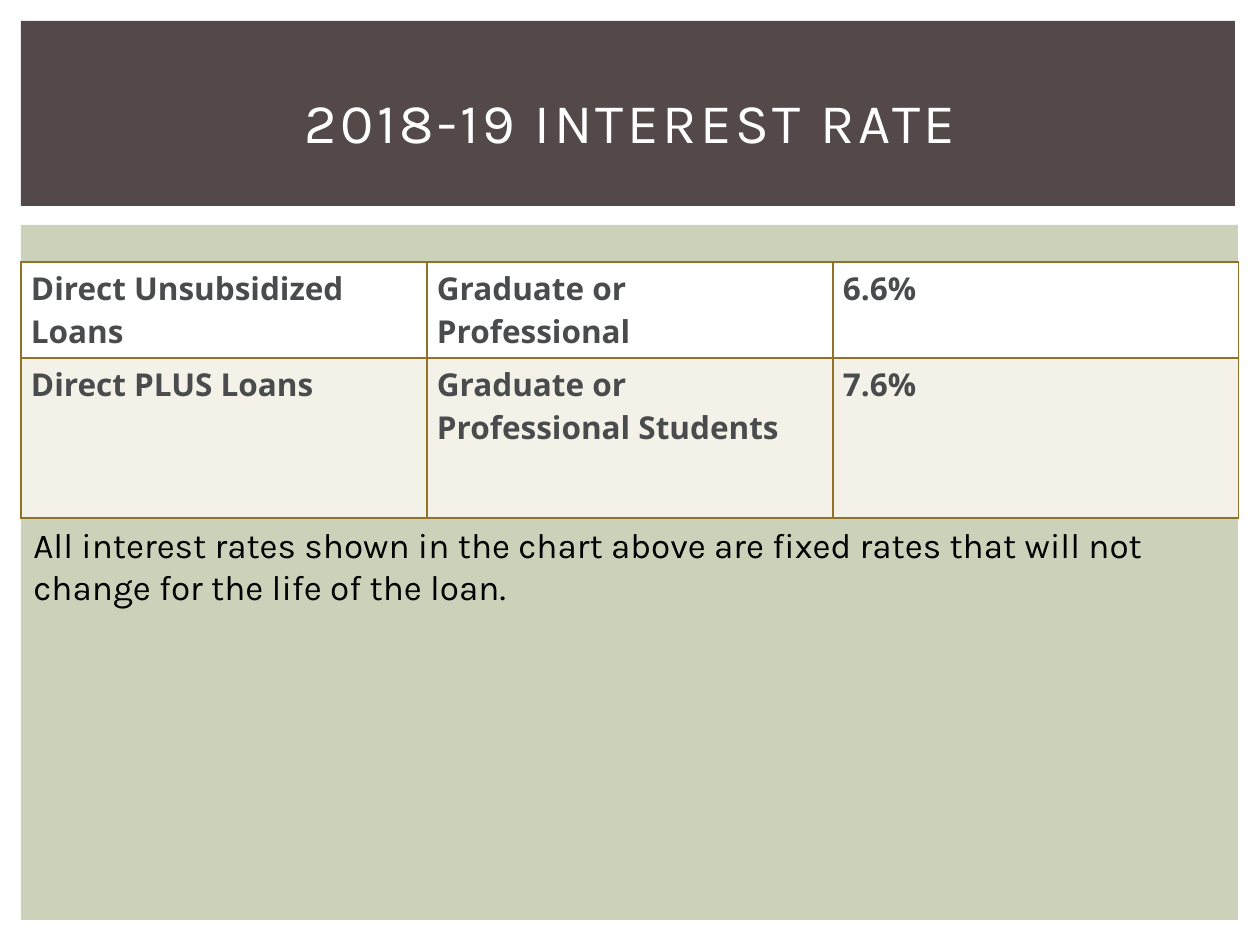
from lxml import etree
from pptx import Presentation
from pptx.dml.color import RGBColor
from pptx.enum.shapes import MSO_SHAPE
from pptx.enum.text import MSO_ANCHOR, MSO_AUTO_SIZE, PP_ALIGN
from pptx.oxml.ns import qn
from pptx.util import Emu, Pt

RECT = MSO_SHAPE.RECTANGLE
MIDDLE = MSO_ANCHOR.MIDDLE
CENTER = PP_ALIGN.CENTER
NO_FIT = MSO_AUTO_SIZE.NONE
GROW = MSO_AUTO_SIZE.SHAPE_TO_FIT_TEXT

PX = 914400 // 126
TITLE_ONLY = 5
BORDER = "917227"

TITLE_FONT = {"name": "Karla", "size": Pt(32), "color": "FFFFFF"}
NOTE_FONT = {"name": "Karla", "size": Pt(20), "color": "000000"}
CELL_FONT = {"name": "Open Sans", "size": Pt(18), "bold": True, "color": "494B4C"}

RATES = [
    ("Direct Unsubsidized Loans", "Graduate or Professional", "6.6%"),
    ("Direct PLUS Loans", "Graduate or Professional Students", "7.6%"),
]
ROW_HEIGHTS = [96, 160]
ROW_FILLS = ["FFFFFF", "F4F1E9"]


def px(n):
    return Emu(n * PX)


def rgb(code):
    return RGBColor.from_string(code)


def set_text(tf, text, font):
    p = tf.paragraphs[0]
    r = p.add_run()
    r.text = text
    for key, value in font.items():
        if key == "color":
            r.font.color.rgb = rgb(value)
        else:
            setattr(r.font, key, value)
    return p, r


def add_panel(slide, x, y, w, h, fill):
    sp = slide.shapes.add_shape(RECT, px(x), px(y), px(w), px(h))
    sp.shadow.inherit = False
    sp.fill.solid()
    sp.fill.fore_color.rgb = rgb(fill)
    sp.line.fill.background()


def place_title(slide, text, x, y, w, h):
    """Format the title placeholder and bring it in front of its panel."""
    title = slide.shapes.title
    title.left, title.top, title.width, title.height = px(x), px(y), px(w), px(h)
    tf = title.text_frame
    tf.auto_size = NO_FIT
    tf.vertical_anchor = MIDDLE
    p, r = set_text(tf, text, TITLE_FONT)
    p.alignment = CENTER
    r.font._element.set("spc", "200")
    slide.shapes._spTree.append(title._element)


def set_borders(cell, color, width):
    tcPr = cell._tc.get_or_add_tcPr()
    for side in ("lnL", "lnR", "lnT", "lnB"):
        ln = etree.SubElement(tcPr, qn(f"a:{side}"), w=str(width))
        fill = etree.SubElement(ln, qn("a:solidFill"))
        etree.SubElement(fill, qn("a:srgbClr"), val=color)


def format_cell(cell, text, fill):
    set_borders(cell, BORDER, Pt(0.75))
    cell.fill.solid()
    cell.fill.fore_color.rgb = rgb(fill)
    cell.margin_left = cell.margin_right = px(10)
    cell.margin_top = cell.margin_bottom = px(5)
    set_text(cell.text_frame, text, CELL_FONT)


def add_rate_table(slide, x, y, col_width):
    rows, cols = len(RATES), len(RATES[0])
    table = slide.shapes.add_table(rows, cols, px(x), px(y), px(col_width * cols),
                                   px(sum(ROW_HEIGHTS))).table
    for col in table.columns:
        col.width = px(col_width)
    for row, height, fill, texts in zip(table.rows, ROW_HEIGHTS, ROW_FILLS, RATES):
        row.height = px(height)
        for cell, text in zip(row.cells, texts):
            format_cell(cell, text, fill)


def add_note(slide, text, x, y, w, h):
    tf = slide.shapes.add_textbox(px(x), px(y), px(w), px(h)).text_frame
    tf.word_wrap = True
    tf.auto_size = GROW
    set_text(tf, text, NOTE_FONT)


def main():
    prs = Presentation()
    prs.slide_width, prs.slide_height = px(1260), px(945)
    slide = prs.slides.add_slide(prs.slide_layouts[TITLE_ONLY])
    add_panel(slide, 21, 225, 1217, 695, "CCD1B9")
    add_panel(slide, 21, 21, 1214, 185, "534949")
    add_rate_table(slide, 21, 262, 406)
    place_title(slide, "2018-19 INTEREST RATE", 53, 49, 1155, 145)
    add_note(slide, "All interest rates shown in the chart above are fixed rates "
             "that will not change for the life of the loan.", 21, 517, 1218, 97)
    prs.save("out.pptx")


if __name__ == "__main__":
    main()
